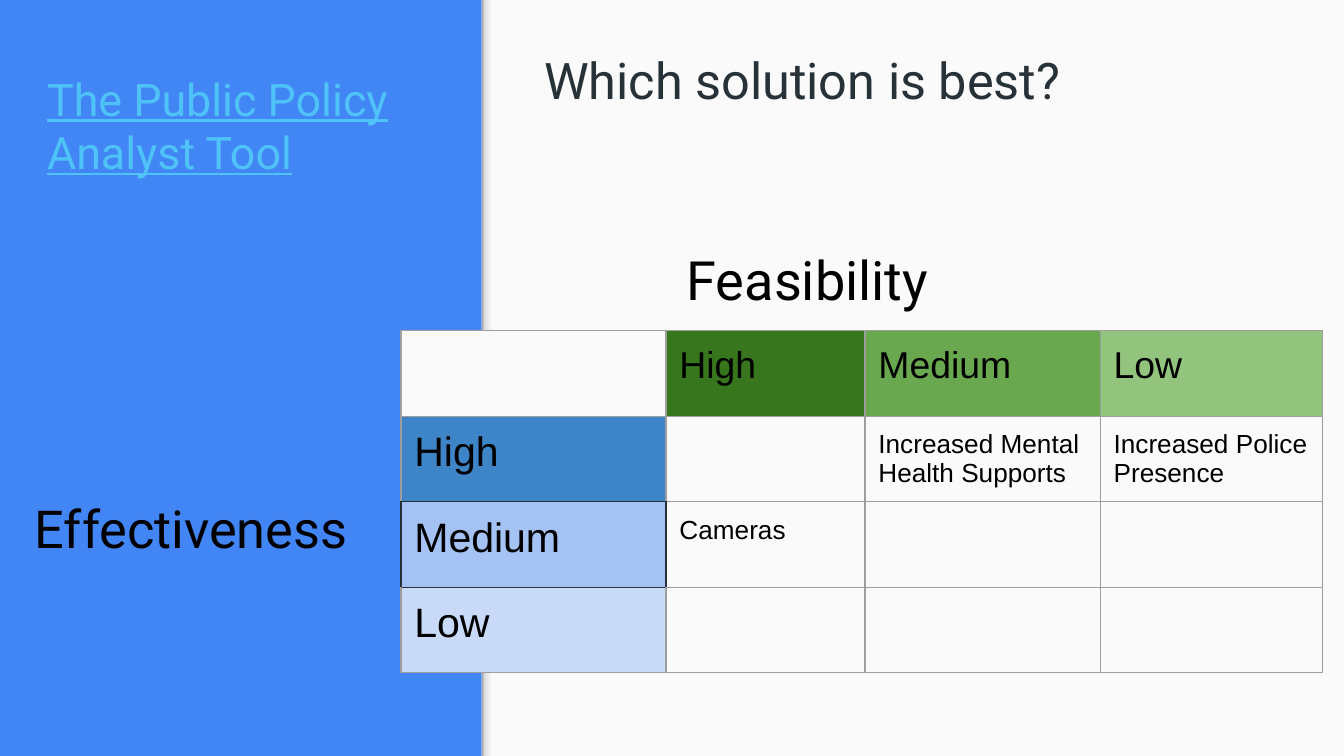
from dataclasses import dataclass

import copy
import pptx
import pptx.dml.color
import pptx.enum.shapes
import pptx.enum.text
import pptx.oxml
import pptx.oxml.ns
import pptx.util

Pt = pptx.util.Pt
RGBColor = pptx.dml.color.RGBColor
Anchor = pptx.enum.text.MSO_ANCHOR
AutoSize = pptx.enum.text.MSO_AUTO_SIZE
RECTANGLE = pptx.enum.shapes.MSO_SHAPE.RECTANGLE

BLUE = RGBColor(0x42, 0x85, 0xF4)
PALE = RGBColor(0xFA, 0xFA, 0xFA)
SKY = RGBColor(0x4F, 0xC3, 0xF7)
INK = RGBColor(0x26, 0x31, 0x38)
BLACK = RGBColor(0, 0, 0)
GRID = RGBColor(0x9E, 0x9E, 0x9E)
FEASIBILITY_FILLS = [RGBColor(0x38, 0x76, 0x1D), RGBColor(0x6A, 0xA8, 0x4F),
                     RGBColor(0x93, 0xC4, 0x7D)]
EFFECTIVENESS_FILLS = [RGBColor(0x3D, 0x85, 0xC6), RGBColor(0xA4, 0xC2, 0xF4),
                       RGBColor(0xC9, 0xDA, 0xF8)]
EDGE_SHADE = [(0, RGBColor(0x99, 0x99, 0x99)), (0.2, RGBColor(0xDE, 0xDE, 0xDE)),
              (0.64, RGBColor(0xF9, 0xF9, 0xF9)), (1, RGBColor(0xF9, 0xF9, 0xF9))]

WIDTH, HEIGHT = 720, 405
PANEL_LEFT = 258
INSET = 7.2
COLUMN_WIDTHS = [142, 106.6, 126, 119]
ROW_HEIGHT = 45.8
LEVELS = ["High", "Medium", "Low"]
SOLUTIONS = {(1, 2): "Increased Mental Health Supports",
             (1, 3): "Increased Police Presence",
             (2, 1): "Cameras"}
# Each border side with the step to the cell that shares it
SIDES = {"L": (0, -1), "R": (0, 1), "T": (-1, 0), "B": (1, 0)}
DARK_CELL = (2, 0)


@dataclass
class Label:
    text: str
    left: float
    top: float
    width: float
    height: float
    size: float
    color: RGBColor
    line_spacing: float = 1.0


LABELS = [
    Label("Which solution is best?", 284.4, 14.4, 418, 101, 27, INK, 1.15),
    Label("Feasibility", 360.7, 124.6, 176.4, 49.7, 29, BLACK),
    Label("Effectiveness", 11.5, 258.5, 193, 48.2, 28, BLACK),
]


def apply(target, values: dict) -> None:
    for name, value in values.items():
        setattr(target, name, value)


def margins() -> dict:
    return {f"margin_{side}": Pt(INSET) for side in ("left", "right", "top", "bottom")}


def write_text(frame, text: str, size: float, color: RGBColor,
               font: str = "Roboto", underline: bool = False) -> None:
    frame.text = text
    paragraph = frame.paragraphs[0]
    paragraph.alignment = pptx.enum.text.PP_ALIGN.LEFT
    run_font = paragraph.runs[0].font
    apply(run_font, {"name": font, "size": Pt(size), "underline": underline})
    run_font.color.rgb = color


def add_label(slide, label: Label) -> None:
    box = slide.shapes.add_textbox(Pt(label.left), Pt(label.top),
                                   Pt(label.width), Pt(label.height))
    apply(box.text_frame, {"word_wrap": True, **margins()})
    write_text(box.text_frame, label.text, label.size, label.color)
    box.text_frame.paragraphs[0].line_spacing = label.line_spacing


def add_block(slide, left: float, width: float):
    block = slide.shapes.add_shape(RECTANGLE, Pt(left), 0, Pt(width), Pt(HEIGHT))
    block.shadow.inherit = False
    block.line.fill.background()
    return block


def shade_edge(fill) -> None:
    fill.gradient()
    fill.gradient_angle = 0
    stops = fill.gradient_stops
    while len(stops) < len(EDGE_SHADE):
        last = stops[-1]._gs
        last.addnext(copy.deepcopy(last))
        stops = fill.gradient_stops
    for stop, (position, color) in zip(stops, EDGE_SHADE):
        stop.position = position
        stop.color.rgb = color


def add_borders(cell, row: int, column: int) -> None:
    properties = cell._tc.get_or_add_tcPr()
    for index, (side, (down, across)) in enumerate(SIDES.items()):
        dark = DARK_CELL in ((row, column), (row + down, column + across))
        line = pptx.oxml.parse_xml(
            f'<a:ln{side} {pptx.oxml.ns.nsdecls("a")} w="{Pt(0.75)}"><a:solidFill>'
            f'<a:srgbClr val="{INK if dark else GRID}"/></a:solidFill></a:ln{side}>')
        properties.insert(index, line)


def cell_content(row: int, column: int) -> tuple:
    """Text, text size and fill of one cell of the matrix."""
    if row == 0 and column == 0:
        return "", 20, PALE
    if row == 0:
        return LEVELS[column - 1], 20, FEASIBILITY_FILLS[column - 1]
    if column == 0:
        return LEVELS[row - 1], 22, EFFECTIVENESS_FILLS[row - 1]
    return SOLUTIONS.get((row, column), ""), 14, None


def add_matrix(slide, left: float, top: float) -> None:
    count = len(LEVELS) + 1
    matrix = slide.shapes.add_table(count, count, Pt(left), Pt(top),
                                    Pt(sum(COLUMN_WIDTHS)), Pt(ROW_HEIGHT * count)).table
    apply(matrix, {"first_row": False, "horz_banding": False})
    for column, width in enumerate(COLUMN_WIDTHS):
        matrix.columns[column].width = Pt(width)
    for row in range(count):
        matrix.rows[row].height = Pt(ROW_HEIGHT)
        for column in range(count):
            cell = matrix.cell(row, column)
            text, size, color = cell_content(row, column)
            apply(cell, margins())
            if color is None:
                cell.fill.background()
            else:
                cell.fill.solid()
                cell.fill.fore_color.rgb = color
            if text:
                write_text(cell.text_frame, text, size, BLACK, "Arial")
            add_borders(cell, row, column)


def main() -> None:
    deck = pptx.Presentation()
    apply(deck, {"slide_width": Pt(WIDTH), "slide_height": Pt(HEIGHT)})
    slide = deck.slides.add_slide(deck.slide_layouts[5])

    # Blue background with a pale panel and its shaded edge
    slide.background.fill.solid()
    slide.background.fill.fore_color.rgb = BLUE
    panel = add_block(slide, PANEL_LEFT, WIDTH - PANEL_LEFT)
    panel.fill.solid()
    panel.fill.fore_color.rgb = PALE
    shade_edge(add_block(slide, PANEL_LEFT, 8.6).fill)

    # Title
    title = slide.shapes.title
    apply(title, {"left": Pt(18), "top": Pt(28), "width": Pt(221), "height": Pt(75)})
    apply(title.text_frame, {"word_wrap": True, "auto_size": AutoSize.NONE,
                             "vertical_anchor": Anchor.BOTTOM, **margins()})
    write_text(title.text_frame, "The Public Policy Analyst Tool", 24, SKY, underline=True)

    # Matrix with its question and axis labels
    add_matrix(slide, 214.8, 177.2)
    for label in LABELS:
        add_label(slide, label)

    deck.save("out.pptx")


if __name__ == "__main__":
    main()
